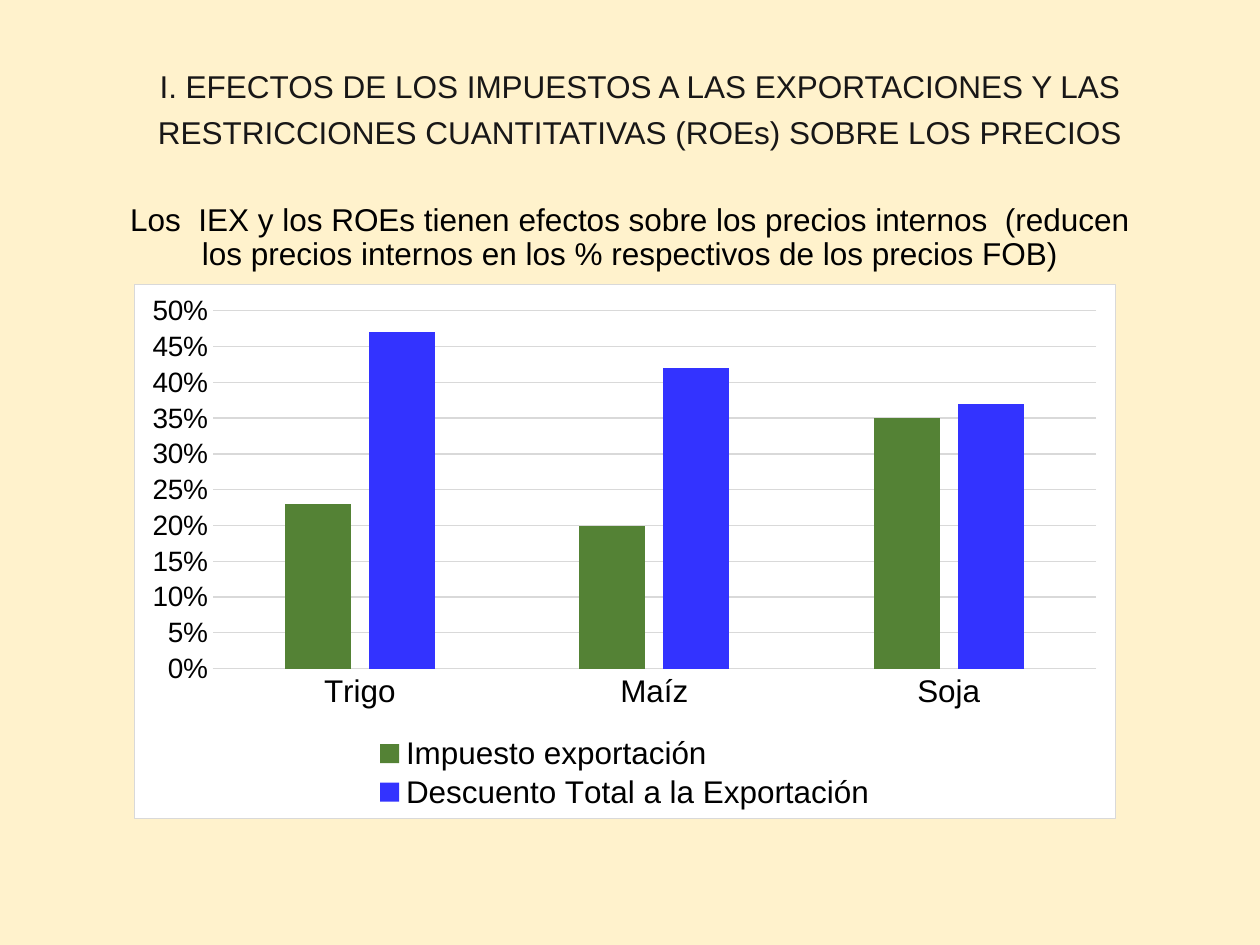
from pptx import Presentation
from pptx.chart.data import CategoryChartData
from pptx.dml.color import RGBColor
from pptx.enum import chart as ec, text as et
from pptx.oxml import parse_xml
from pptx.oxml.ns import nsdecls
from pptx.util import Inches, Pt

CREAM = RGBColor(0xFF, 0xF2, 0xCC)
INK = RGBColor(0x18, 0x17, 0x17)
BLACK = RGBColor(0, 0, 0)
GREY = RGBColor(0xD9, 0xD9, 0xD9)
GREEN = RGBColor(0x54, 0x82, 0x35)
BLUE = RGBColor(0x33, 0x33, 0xFF)


def style(font, size, color=BLACK):
    font.name = "Arial"
    font.size = Pt(size)
    font.bold = False
    font.color.rgb = color


def layout(inner, x, y, w, h):
    target = '<c:layoutTarget val="inner"/>' if inner else ""
    return parse_xml(
        f'<c:layout {nsdecls("c")}><c:manualLayout>{target}'
        '<c:xMode val="edge"/><c:yMode val="edge"/>'
        f'<c:x val="{x}"/><c:y val="{y}"/><c:w val="{w}"/><c:h val="{h}"/>'
        '</c:manualLayout></c:layout>')


prs = Presentation()
prs.slide_width = Inches(10)
prs.slide_height = Inches(7.5)
slide = prs.slides.add_slide(prs.slide_layouts[5])
slide.background.fill.solid()
slide.background.fill.fore_color.rgb = CREAM

title = slide.shapes.title
title.left, title.top = Inches(0.59), Inches(0.36)
title.width, title.height = Inches(8.98), Inches(0.95)
title.text = ("I. EFECTOS DE LOS IMPUESTOS A LAS EXPORTACIONES Y LAS "
              "RESTRICCIONES CUANTITATIVAS (ROEs) SOBRE LOS PRECIOS")
frame = title.text_frame
frame.vertical_anchor = et.MSO_ANCHOR.MIDDLE
frame.auto_size = et.MSO_AUTO_SIZE.NONE
para = frame.paragraphs[0]
para.alignment = et.PP_ALIGN.CENTER
para.line_spacing = 1.2
style(para.font, 18, INK)

box = slide.shapes.add_textbox(Inches(0.75), Inches(1.57), Inches(8.5), Inches(0.65))
box.text_frame.word_wrap = True
para = box.text_frame.paragraphs[0]
para.text = ("Los  IEX y los ROEs tienen efectos sobre los precios internos  "
             "(reducen los precios internos en los % respectivos de los precios FOB)")
para.alignment = et.PP_ALIGN.CENTER
para.line_spacing = 0.9
style(para.font, 18)

data = CategoryChartData(number_format="0%")
data.categories = ["Trigo", "Maíz", "Soja"]
data.add_series("Impuesto exportación", [0.23, 0.2, 0.35])
data.add_series("Descuento Total a la Exportación", [0.47, 0.42, 0.37])
chart = slide.shapes.add_chart(
    ec.XL_CHART_TYPE.COLUMN_CLUSTERED,
    Inches(1.06), Inches(2.25), Inches(7.8), Inches(4.25), data).chart
style(chart.font, 14)
chart.has_title = False

plot = chart.plots[0]
plot.gap_width = 219
plot.overlap = -27
plot.vary_by_categories = False
for series, color in zip(plot.series, [GREEN, BLUE]):
    series.format.fill.solid()
    series.format.fill.fore_color.rgb = color

cat, val = chart.category_axis, chart.value_axis
for axis, size in [(cat, 18), (val, 16)]:
    axis.major_tick_mark = axis.minor_tick_mark = ec.XL_TICK_MARK.NONE
    style(axis.tick_labels.font, size)
val.minimum_scale, val.maximum_scale, val.major_unit = 0, 0.5, 0.05
val.tick_labels.number_format = "0%"
val.tick_labels.number_format_is_linked = False
val.format.line.fill.background()
for line in [cat.format.line, val.major_gridlines.format.line]:
    line.color.rgb = GREY
    line.width = Pt(0.75)

chart.has_legend = True
legend = chart.legend
legend.position = ec.XL_LEGEND_POSITION.BOTTOM
legend.include_in_layout = False
style(legend.font, 18)

root = chart.element
for old in root.xpath("c:chart/c:plotArea/c:layout | c:chart/c:legend/c:layout"):
    old.getparent().remove(old)
root.xpath("c:chart/c:plotArea")[0].insert(0, layout(True, 0.08, 0.05, 0.9, 0.67))
root.xpath("c:chart/c:legend/c:legendPos")[0].addnext(layout(False, 0.24, 0.84, 0.52, 0.15))
root.xpath("c:chart")[0].addnext(parse_xml(
    f'<c:spPr {nsdecls("c", "a")}><a:solidFill><a:srgbClr val="FFFFFF"/></a:solidFill>'
    f'<a:ln w="{Pt(0.75)}"><a:solidFill><a:srgbClr val="{GREY}"/></a:solidFill></a:ln></c:spPr>'))

prs.save("out.pptx")
